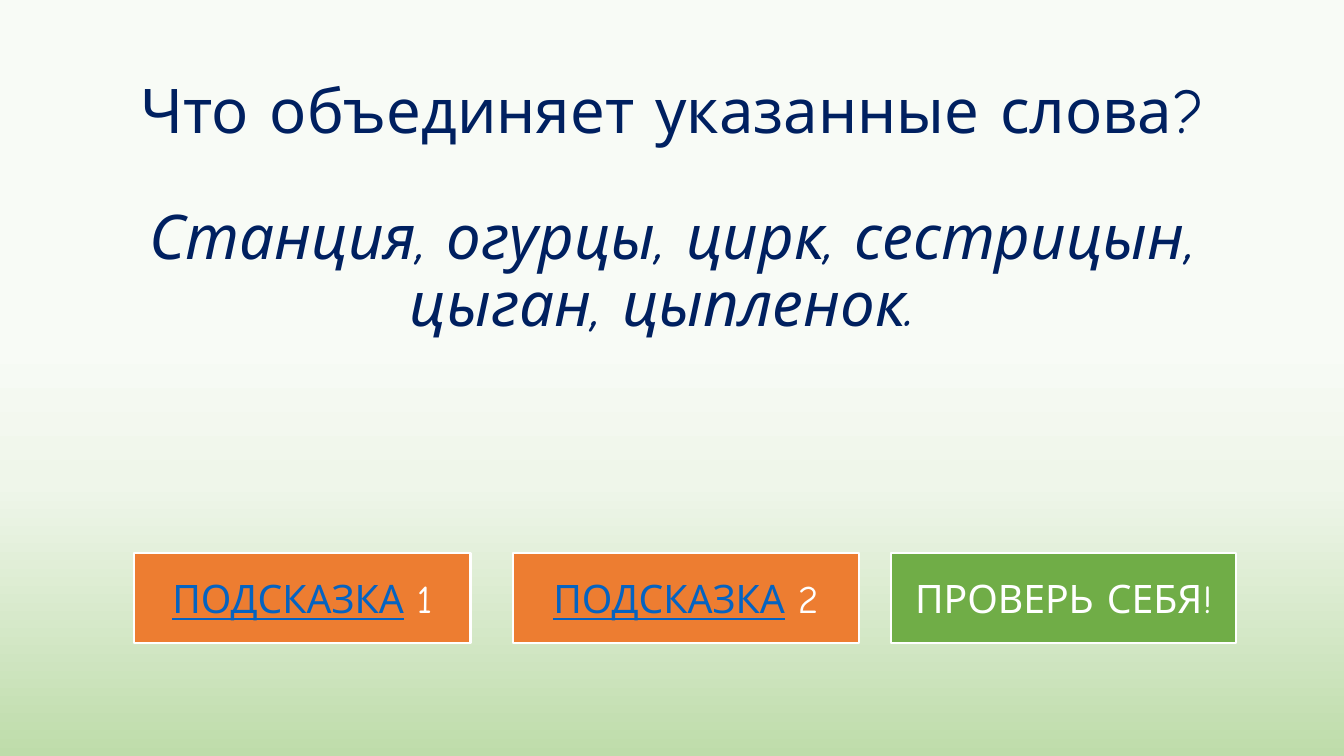
from lxml import etree
from pptx import Presentation
from pptx.dml.color import RGBColor
from pptx.enum.shapes import MSO_SHAPE
from pptx.enum.text import MSO_ANCHOR, PP_ALIGN
from pptx.oxml.ns import qn
from pptx.util import Cm, Pt

RECTANGLE = MSO_SHAPE.RECTANGLE
CENTER = PP_ALIGN.CENTER
TOP, MIDDLE = MSO_ANCHOR.TOP, MSO_ANCHOR.MIDDLE

FONT = "Comic Neue"
NAVY, WHITE, LINK_BLUE = "002060", "FFFFFF", "0563C1"
ORANGE, GREEN = "ED7D31", "70AD47"
BACKGROUND_STOPS = [(45, "F8FBF6"), (64, "EFF6EA"), (100, "BEDCAA")]


def color(value):
    return RGBColor.from_string(value)


def add_span(para, text, size, text_color, italic=False, underline=False):
    span = para.add_run()
    span.text = text
    font = span.font
    font.name, font.size = FONT, Pt(size)
    font.italic, font.underline = italic, underline
    font.color.rgb = color(text_color)


def paint_background(page):
    fill = page.background.fill
    fill.gradient()
    fill.gradient_angle = 270
    stop_list = page.element.find(".//" + qn("a:gsLst"))
    for stop in list(stop_list):
        stop_list.remove(stop)
    for percent, value in BACKGROUND_STOPS:
        stop = etree.SubElement(stop_list, qn("a:gs"), pos=str(percent * 1000))
        etree.SubElement(stop, qn("a:srgbClr"), val=value)


def add_heading(page, box, text, anchor, space_before=0, italic=False):
    frame = page.shapes.add_textbox(*map(Cm, box)).text_frame
    frame.word_wrap = True
    frame.vertical_anchor = anchor
    para = frame.paragraphs[0]
    para.alignment = CENTER
    para.line_spacing = 0.9
    para.space_before = Pt(space_before)
    add_span(para, text, 44, NAVY, italic=italic)


def add_button(page, box, fill_color, spans):
    button = page.shapes.add_shape(RECTANGLE, *map(Cm, box))
    button.shadow.inherit = False
    button.fill.solid()
    button.fill.fore_color.rgb = color(fill_color)
    button.line.color.rgb = color(WHITE)
    button.line.width = Pt(1.5)
    frame = button.text_frame
    frame.word_wrap = True
    frame.vertical_anchor = MIDDLE
    para = frame.paragraphs[0]
    para.alignment = CENTER
    for text, text_color, underline in spans:
        add_span(para, text, 28, text_color, underline=underline)


def add_button_row(page, top, height):
    def hint(number):
        return [("ПОДСКАЗКА", LINK_BLUE, True), (f" {number}", WHITE, False)]

    buttons = [
        (3.38, 8.48, ORANGE, hint(1)),
        (12.93, 8.71, ORANGE, hint(2)),
        (22.45, 8.71, GREEN, [("ПРОВЕРЬ СЕБЯ!", WHITE, False)]),
    ]
    for left, width, fill_color, spans in buttons:
        add_button(page, (left, top, width, height), fill_color, spans)


def main():
    deck = Presentation()
    deck.slide_width, deck.slide_height = Cm(33.87), Cm(19.05)
    page = deck.slides.add_slide(deck.slide_layouts[6])
    paint_background(page)

    # Question and word list
    add_heading(page, (2.34, 1.02, 29.21, 3.68),
                "Что объединяет указанные слова?", MIDDLE)
    add_heading(page, (2.34, 5.08, 29.21, 12.09),
                "Станция, огурцы, цирк, сестрицын, цыган, цыпленок. ",
                TOP, space_before=10, italic=True)

    # Hints and answer check
    add_button_row(page, top=13.94, height=2.26)
    deck.save("out.pptx")


if __name__ == "__main__":
    main()
